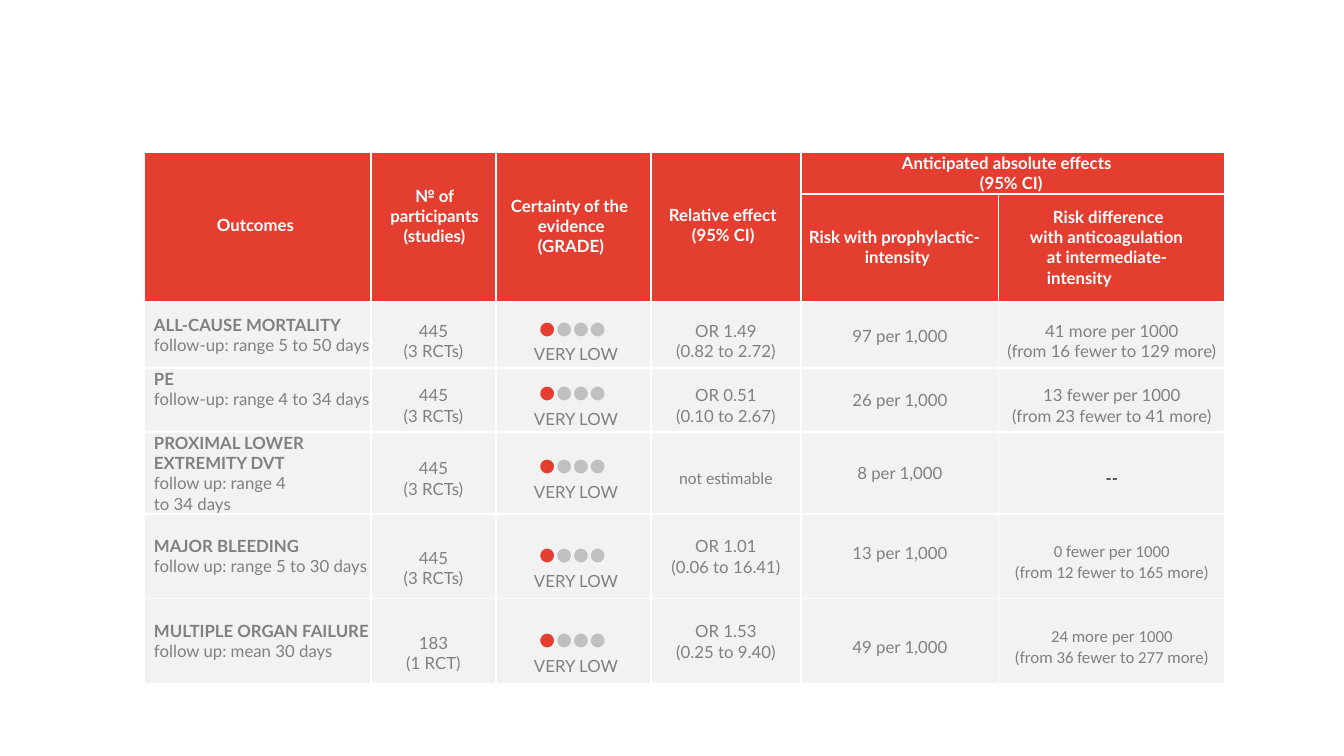
"""Build a slide with one table of outcomes, certainty and effects."""
from lxml import etree
from pptx import Presentation, util as u
from pptx.dml.color import RGBColor
from pptx.enum import text as t
from pptx.oxml import ns

PX = u.Inches(1) / 100.8
RED = RGBColor(0xE4, 0x3E, 0x31)
WHITE = RGBColor(0xFF, 0xFF, 0xFF)
PALE = RGBColor(0xF2, 0xF2, 0xF2)
GREY = RGBColor(0x80, 0x80, 0x80)
DOT = RGBColor(0xC0, 0xC0, 0xC0)
BLACK = RGBColor(0, 0, 0)
MID, TOP = t.MSO_ANCHOR.MIDDLE, t.MSO_ANCHOR.TOP
LEFT, MIDST = t.PP_ALIGN.LEFT, t.PP_ALIGN.CENTER


def px(n):
    return u.Emu(round(n * PX))


def write(cell, lines, top, color=GREY, bold=False, face="Lato",
          align=MIDST, anchor=MID, inset=(0, 0), dents=()):
    """Fill a cell; a negative top lifts the text from below."""
    cell.margin_top, cell.margin_bottom = px(max(top, 0)), px(max(-top, 0))
    cell.margin_left, cell.margin_right = px(inset[0]), px(inset[1])
    cell.vertical_anchor = anchor
    cell.text_frame.text = "\n".join(lines)
    for i, para in enumerate(cell.text_frame.paragraphs):
        para.alignment = align
        if dents:
            props = para._p.get_or_add_pPr()
            props.set("marL", str(px(dents[i][0])))
            props.set("indent", str(px(dents[i][1])))
        for run in para.runs:
            font = run.font
            font.name, font.size, font.bold = face, u.Pt(12), bold
            font.color.rgb = color


deck = Presentation()
deck.slide_width, deck.slide_height = px(1344), px(756)
slide = deck.slides.add_slide(deck.slide_layouts[6])

wide = [227, 125, 155, 150, 198, 226]
high = [42, 108, 66, 64, 82, 85, 85]
frame = slide.shapes.add_table(len(high), len(wide), px(144), px(152),
                               px(sum(wide)), px(sum(high)))
grid = frame.table
for col, size in zip(grid.columns, wide):
    col.width = px(size)
for row, size in zip(grid.rows, high):
    row.height = px(size)

for r in range(len(high)):
    for c in range(len(wide)):
        cell = grid.cell(r, c)
        props = cell._tc.get_or_add_tcPr()
        for side in ("lnL", "lnR", "lnT", "lnB"):
            line = etree.SubElement(props, ns.qn("a:" + side), w=str(u.Pt(1)))
            fill = etree.SubElement(line, ns.qn("a:solidFill"))
            etree.SubElement(fill, ns.qn("a:srgbClr"), val=str(WHITE))
        cell.fill.solid()
        cell.fill.fore_color.rgb = RED if r < 2 else PALE

for c in range(4):
    grid.cell(0, c).merge(grid.cell(1, c))
grid.cell(0, 4).merge(grid.cell(0, 5))

heads = [
    (0, 0, ["Outcomes"], 63, MIDST, (0, 4), ()),
    (0, 1, ["№ of participants (studies)"], 34, MIDST, (12, 10), ()),
    (0, 2, ["Certainty of the evidence (GRADE)"], 44, LEFT, (0, 0), [(42, -27)]),
    (0, 3, ["Relative effect (95% CI)"], 53, LEFT, (0, 0), [(41, -23)]),
    (0, 4, ["Anticipated absolute effects (95% CI)"], 1, LEFT, (0, 95),
     [(179, -78)]),
    (1, 4, ["Risk with prophylactic- intensity"], 33, LEFT, (0, 0), [(64, -56)]),
    (1, 5, ["Risk difference with anticoagulation", "at intermediate-intensity"],
     13, LEFT, (0, 35), [(31, 23), (48, 0)]),
]
for r, c, lines, top, align, inset, dents in heads:
    write(grid.cell(r, c), lines, top, WHITE, True, align=align, anchor=TOP,
          inset=inset, dents=dents)

rows = [
    (["ALL-CAUSE MORTALITY", "follow-up: range 5 to 50 days"],
     ["445", "(3 RCTs)"], ["OR 1.49", "(0.82 to 2.72)"], "97 per 1,000",
     ["41 more per 1000", "(from 16 fewer to 129 more)"],
     (13, 12, 5, 12, 1, 12)),
    (["PE", "follow-up: range 4 to 34 days"],
     ["445", "(3 RCTs)"], ["OR 0.51", "(0.10 to 2.67)"], "26 per 1,000",
     ["13 fewer per 1000", "(from 23 fewer to 41 more)"],
     (1, 11, 4, 11, 0, 11)),
    (["PROXIMAL LOWER \vEXTREMITY DVT", "follow up: range 4 \vto 34 days"],
     ["445", "(3 RCTs)"], ["not estimable"], "8 per 1,000", ["--"],
     (1, 11, 4, 11, 0, 11)),
    (["MAJOR BLEEDING", "follow up: range 5 to 30 days"],
     ["445", "(3 RCTs)"], ["OR 1.01", "(0.06 to 16.41)"], "13 per 1,000",
     ["0 fewer per 1000", "(from 12 fewer to 165 more)"],
     (22, 23, 15, 0, -7, 12)),
    (["MULTIPLE ORGAN FAILURE", "follow up: mean 30 days"],
     ["183", "(1 RCT)"], ["OR 1.53", "(0.25 to 9.40)"], "49 per 1,000",
     ["24 more per 1000", "(from 36 fewer to 277 more)"],
     (22, 23, 15, 0, 12, 12)),
]
for r, (name, count, odds, risk, diff, tops) in enumerate(rows, 2):
    cells = [grid.cell(r, c) for c in range(len(wide))]
    write(cells[0], name, tops[0], align=LEFT, anchor=TOP, inset=(10, 0))
    for run in cells[0].text_frame.paragraphs[0].runs:
        run.font.bold = True
    write(cells[1], count, tops[1])
    write(cells[2], ["●", "VERY LOW"], tops[2], align=LEFT,
          dents=[(43, 0), (38, 0)])
    dots = cells[2].text_frame.paragraphs[0]
    dots.add_run().text = "●●●"
    for run, color in zip(dots.runs, (RED, DOT)):
        run.font.name, run.font.size = "Lato", u.Pt(20)
        run.font.bold = False
        run.font.color.rgb = color
    write(cells[3], odds, tops[3],
          face="Calibri" if odds == ["not estimable"] else "Lato")
    write(cells[4], [risk], tops[4])
    write(cells[5], diff, tops[5], BLACK if diff == ["--"] else GREY,
          face="Calibri" if r > 4 else "Lato")

deck.save("out.pptx")
